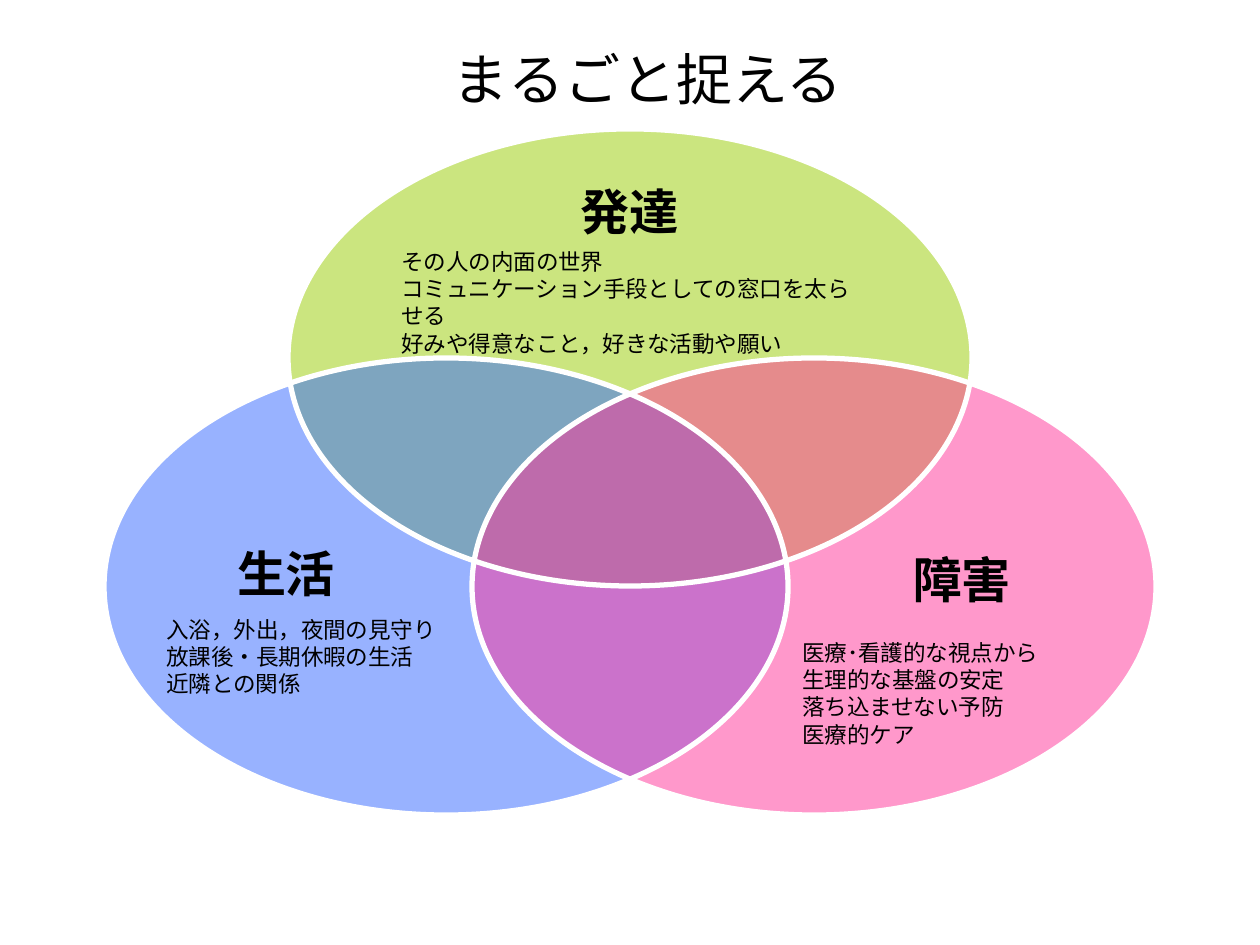
"""Build a slide with a three-circle Venn diagram of viewing a person as a whole."""
from dataclasses import dataclass

from lxml import etree
from pptx import Presentation
from pptx.dml.color import RGBColor
from pptx.enum.shapes import MSO_SHAPE
from pptx.enum.text import MSO_ANCHOR, MSO_AUTO_SIZE, PP_ALIGN
from pptx.oxml.ns import qn
from pptx.util import Emu, Pt

OVAL = MSO_SHAPE.OVAL
TOP = MSO_ANCHOR.TOP
NO_AUTOFIT = MSO_AUTO_SIZE.NONE
LEFT, CENTER = PP_ALIGN.LEFT, PP_ALIGN.CENTER

EMU_PER_PX = 914400 / 126
TITLE_ONLY = 5


@dataclass(frozen=True)
class Theme:
    font: str = "Calibri"
    ink: str = "000000"
    rim: str = "FFFFFF"
    rim_width: float = 3
    opacity: int = 50
    title_size: float = 32
    heading_size: float = 28
    body_size: float = 12.9


@dataclass(frozen=True)
class Area:
    left: int
    top: int
    width: int
    height: int


@dataclass(frozen=True)
class Aspect:
    color: str
    oval: Area
    heading: str
    heading_area: Area
    details: tuple[str, ...]
    details_area: Area


THEME = Theme()
OVAL_WIDTH, OVAL_HEIGHT = 684, 457
TITLE = "まるごと捉える"
TITLE_AREA = Area(185, 38, 925, 81)

ASPECTS = (
    Aspect("99CC00", Area(288, 129, OVAL_WIDTH, OVAL_HEIGHT),
           "発達", Area(389, 175, 481, 72),
           ("その人の内面の世界",
            "コミュニケーション手段としての窓口を太らせる",
            "好みや得意なこと，好きな活動や願い"),
           Area(389, 242, 481, 122)),
    Aspect("3366FF", Area(104, 358, OVAL_WIDTH, OVAL_HEIGHT),
           "生活", Area(80, 537, 412, 72),
           ("入浴，外出，夜間の見守り",
            "放課後・長期休暇の生活",
            "近隣との関係"),
           Area(154, 610, 315, 95)),
    Aspect("FF3399", Area(472, 358, OVAL_WIDTH, OVAL_HEIGHT),
           "障害", Area(756, 543, 412, 72),
           ("医療･看護的な視点から",
            "生理的な基盤の安定",
            "落ち込ませない予防",
            "医療的ケア"),
           Area(790, 633, 389, 122)),
)


def px(length: int) -> Emu:
    """Turn pixels into EMU."""
    return Emu(round(length * EMU_PER_PX))


def bounds(area: Area) -> tuple[Emu, Emu, Emu, Emu]:
    """Return left, top, width and height in EMU."""
    return px(area.left), px(area.top), px(area.width), px(area.height)


def write(box, lines: tuple[str, ...], size: float, align, bold: bool = False) -> None:
    """Fill a box with one paragraph per line."""
    frame = box.text_frame
    frame.word_wrap = True
    frame.auto_size = NO_AUTOFIT
    frame.vertical_anchor = TOP
    for index, line in enumerate(lines):
        para = frame.add_paragraph() if index else frame.paragraphs[0]
        para.alignment = align
        span = para.add_run()
        span.text = line
        span.font.name = THEME.font
        span.font.size = Pt(size)
        span.font.bold = bold
        span.font.color.rgb = RGBColor.from_string(THEME.ink)
        latin = span.font._element.find(qn("a:latin"))
        east_asian = etree.Element(qn("a:ea"), typeface=THEME.font)
        latin.addnext(east_asian)


def add_text(page, area: Area, lines: tuple[str, ...], size: float, align,
             bold: bool = False) -> None:
    """Add a wrapped text box."""
    write(page.shapes.add_textbox(*bounds(area)), lines, size, align, bold)


def add_disc(group, aspect: Aspect) -> None:
    """Add a translucent oval without a line."""
    disc = group.shapes.add_shape(OVAL, *bounds(aspect.oval))
    disc.shadow.inherit = False
    disc.line.fill.background()
    disc.fill.solid()
    disc.fill.fore_color.rgb = RGBColor.from_string(aspect.color)
    color = disc._element.spPr.find(qn("a:solidFill")).find(qn("a:srgbClr"))
    etree.SubElement(color, qn("a:alpha"), val=str(THEME.opacity * 1000))


def add_rim(group, aspect: Aspect) -> None:
    """Add an oval outline without a fill."""
    rim = group.shapes.add_shape(OVAL, *bounds(aspect.oval))
    rim.shadow.inherit = False
    rim.fill.background()
    rim.line.color.rgb = RGBColor.from_string(THEME.rim)
    rim.line.width = Pt(THEME.rim_width)


def add_venn(page) -> None:
    """Add all discs, then their rims on top, as one group."""
    group = page.shapes.add_group_shape()
    for draw in (add_disc, add_rim):
        for aspect in ASPECTS:
            draw(group, aspect)


def main() -> None:
    """Build and save the deck."""
    deck = Presentation()
    deck.slide_width, deck.slide_height = px(1260), px(945)
    page = deck.slides.add_slide(deck.slide_layouts[TITLE_ONLY])
    title = page.shapes.title
    title.left, title.top, title.width, title.height = bounds(TITLE_AREA)
    write(title, (TITLE,), THEME.title_size, CENTER)
    add_venn(page)
    for aspect in ASPECTS:
        add_text(page, aspect.details_area, aspect.details, THEME.body_size, LEFT)
        add_text(page, aspect.heading_area, (aspect.heading,),
                 THEME.heading_size, CENTER, bold=True)
    deck.save("out.pptx")


if __name__ == "__main__":
    main()
